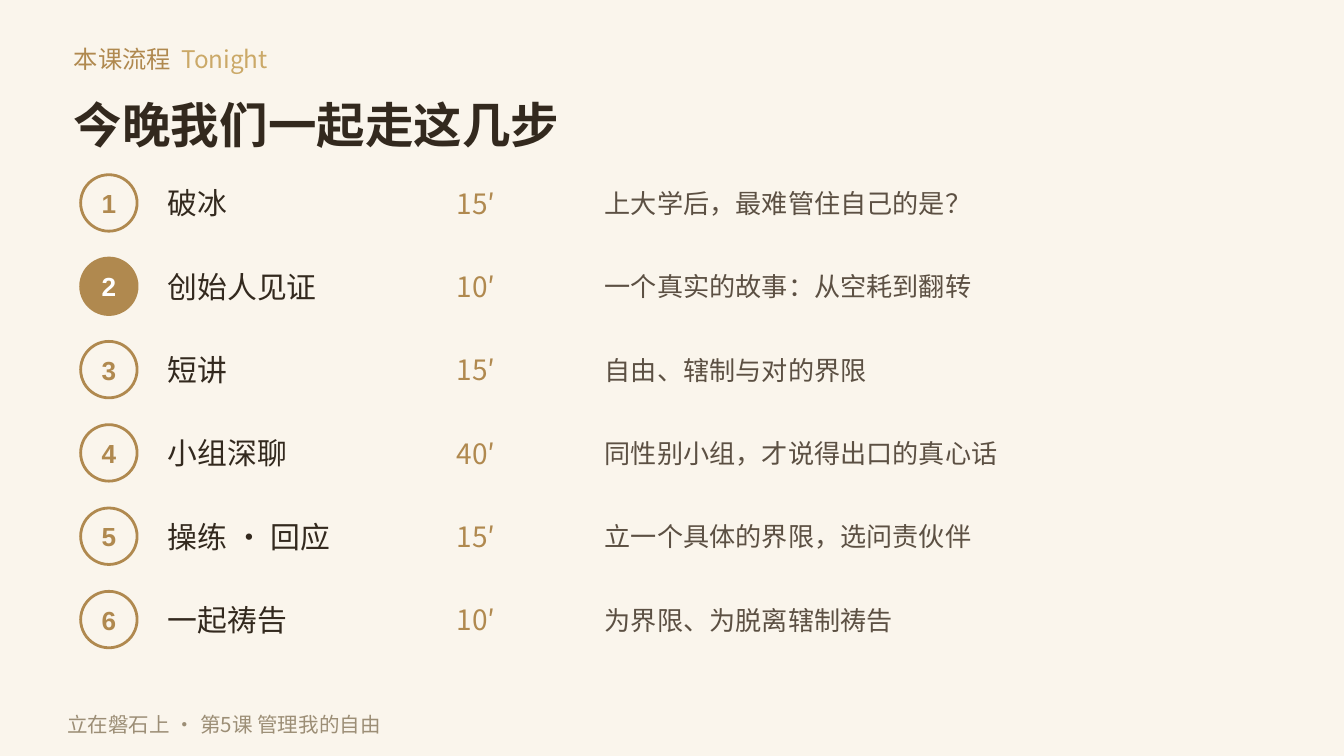
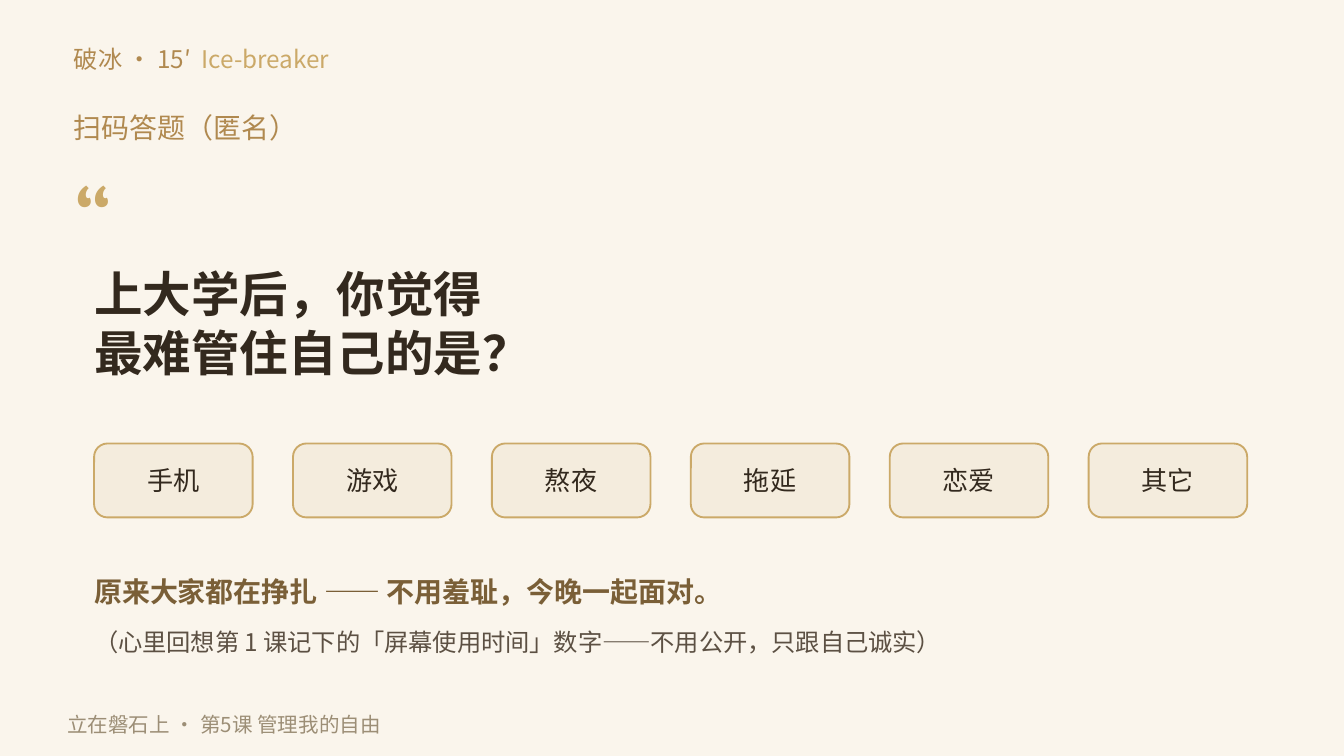
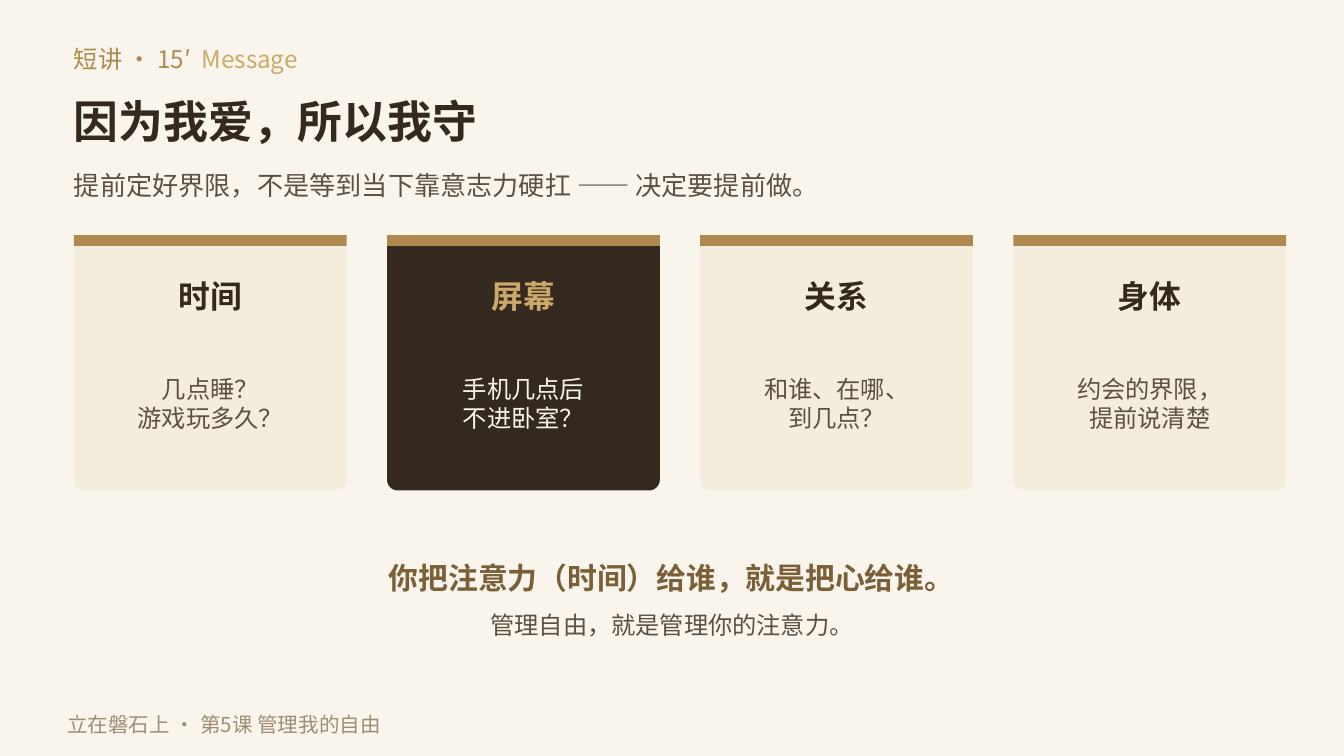
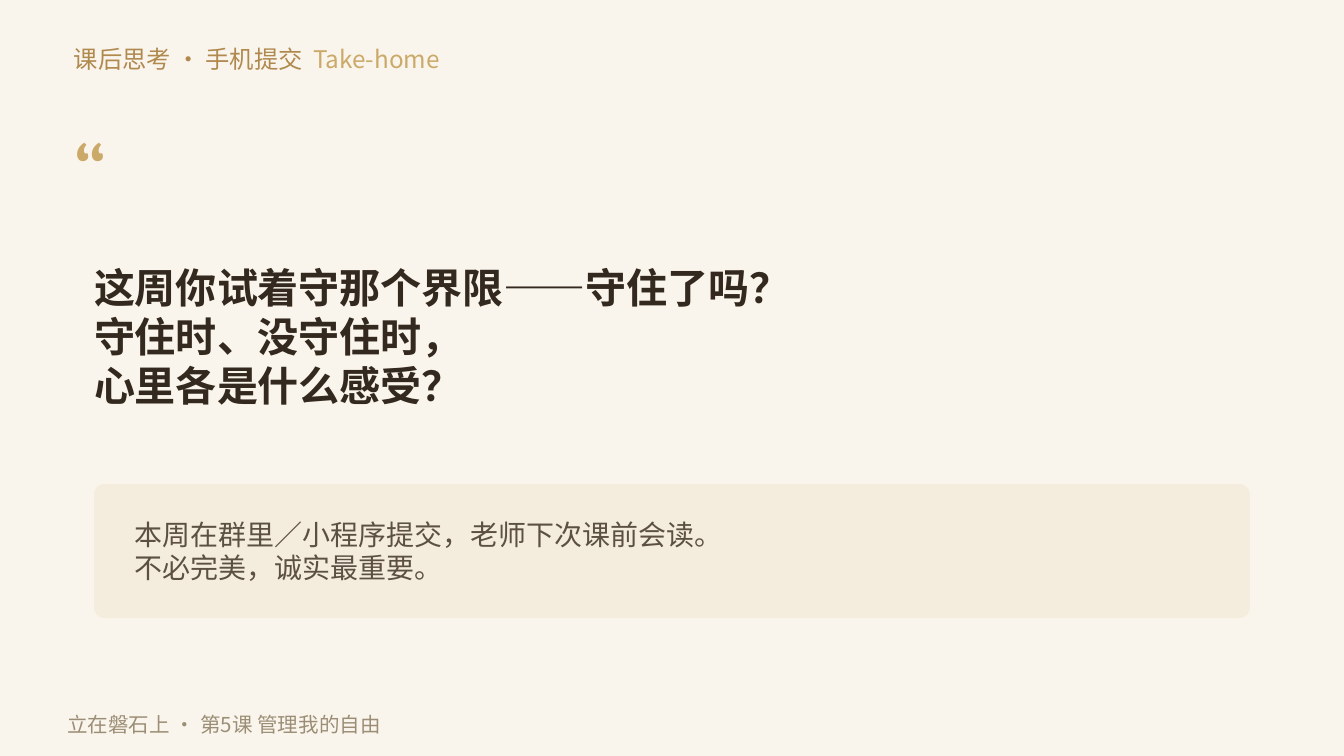
from dataclasses import dataclass
from typing import NamedTuple, Optional

from lxml import etree
from pptx import Presentation
from pptx.dml.color import RGBColor
from pptx.enum.shapes import MSO_SHAPE
from pptx.enum.text import MSO_ANCHOR, PP_ALIGN
from pptx.oxml.ns import qn
from pptx.util import Inches, Pt

RECTANGLE, ROUNDED, OVAL = MSO_SHAPE.RECTANGLE, MSO_SHAPE.ROUNDED_RECTANGLE, MSO_SHAPE.OVAL
LEFT, CENTER = PP_ALIGN.LEFT, PP_ALIGN.CENTER
MIDDLE = MSO_ANCHOR.MIDDLE
BLANK_LAYOUT = 6


@dataclass(frozen=True)
class Theme:
    cream: str = "FAF5EC"
    sand: str = "F4ECDD"
    bronze: str = "B0894F"
    gold: str = "CBA968"
    brown: str = "7A5F37"
    ink: str = "33291E"
    body: str = "5C5043"
    muted: str = "9C8E76"
    white: str = "FFFFFF"

    font: str = "Noto Sans CJK SC"
    number_font: str = "Arial"
    quote_font: str = "Cambria"

    footer_size: float = 11
    small_size: float = 13
    text_size: float = 14
    lead_size: float = 15
    item_size: float = 16
    card_size: float = 17
    question_size: float = 22
    heading_size: float = 24
    title_size: float = 26
    small_quote_size: float = 48
    large_quote_size: float = 56


THEME = Theme()


class Area(NamedTuple):
    """Left, top, width and height in inches."""
    left: float
    top: float
    width: float
    height: float

    def lengths(self) -> list:
        return [Inches(value) for value in self]


class Style(NamedTuple):
    size: float
    color: str
    bold: bool = False
    font: str = THEME.font


class Step(NamedTuple):
    name: str
    minutes: int
    detail: str
    filled: bool = False


class Card(NamedTuple):
    name: str
    lines: list
    dark: bool = False


SLIDE = Area(0, 0, 10, 10 * 9 / 16)
FOOTER = "立在磐石上 · 第5课 管理我的自由"
KICKER = Style(THEME.small_size, THEME.bronze)
KICKER_ENGLISH = Style(THEME.small_size, THEME.gold)
TITLE = Style(THEME.title_size, THEME.ink, True)
HEADING = Style(THEME.heading_size, THEME.ink, True)
QUESTION = Style(THEME.question_size, THEME.ink, True)
LEAD = Style(THEME.lead_size, THEME.bronze)
ITEM = Style(THEME.item_size, THEME.ink)
CHIP = Style(THEME.text_size, THEME.ink)
DETAIL = Style(THEME.text_size, THEME.body)
NOTE = Style(THEME.small_size, THEME.body)

STEPS = [
    Step("破冰", 15, "上大学后，最难管住自己的是？"),
    Step("创始人见证", 10, "一个真实的故事：从空耗到翻转", True),
    Step("短讲", 15, "自由、辖制与对的界限"),
    Step("小组深聊", 40, "同性别小组，才说得出口的真心话"),
    Step("操练 · 回应", 15, "立一个具体的界限，选问责伙伴"),
    Step("一起祷告", 10, "为界限、为脱离辖制祷告"),
]
STRUGGLES = ["手机", "游戏", "熬夜", "拖延", "恋爱", "其它"]
CARDS = [
    Card("时间", ["几点睡？", "游戏玩多久？"]),
    Card("屏幕", ["手机几点后", "不进卧室？"], True),
    Card("关系", ["和谁、在哪、", "到几点？"]),
    Card("身体", ["约会的界限，", "提前说清楚"]),
]


def add_span(para, text: str, style: Style, spacing: Optional[int] = None) -> None:
    """Add a run; spacing is extra letter spacing in hundredths of a point."""
    span = para.add_run()
    span.text = text
    formats = {"size": Pt(style.size), "bold": style.bold, "name": style.font}
    for name, value in formats.items():
        setattr(span.font, name, value)
    span.font.color.rgb = RGBColor.from_string(style.color)
    properties = span.font._element
    for tag in ("a:ea", "a:cs"):
        etree.SubElement(properties, qn(tag)).set("typeface", style.font)
    if spacing is not None:
        properties.set("spc", str(spacing))


def add_text(page, area: Area, lines: list, style: Style, align=LEFT):
    """Add a text box without insets, one paragraph a line."""
    frame = page.shapes.add_textbox(*area.lengths()).text_frame
    formats = {"word_wrap": True, "vertical_anchor": MIDDLE, "margin_left": 0,
               "margin_top": 0, "margin_right": 0, "margin_bottom": 0}
    for name, value in formats.items():
        setattr(frame, name, value)
    for index, line in enumerate(lines):
        para = frame.add_paragraph() if index else frame.paragraphs[0]
        para.alignment = align
        add_span(para, line, style)
    return frame


def add_box(page, kind, area: Area, fill: str, line: Optional[str] = None,
            line_width: float = 1, radius: float = 0) -> None:
    """Add a filled shape; radius is the corner radius in inches."""
    box = page.shapes.add_shape(kind, *area.lengths())
    box.shadow.inherit = False
    box.fill.solid()
    box.fill.fore_color.rgb = RGBColor.from_string(fill)
    if line:
        box.line.color.rgb = RGBColor.from_string(line)
        box.line.width = Pt(line_width)
    else:
        box.line.fill.background()
    if radius:
        box.adjustments[0] = radius / min(area.width, area.height)


def add_page(deck, kicker: str, english: str):
    """Add a slide with the shared ground, kicker and footer."""
    page = deck.slides.add_slide(deck.slide_layouts[BLANK_LAYOUT])
    add_box(page, RECTANGLE, SLIDE, THEME.cream)
    frame = add_text(page, Area(0.55, 0.28, 8.5, 0.32), [kicker], KICKER)
    add_span(frame.paragraphs[0], " ", KICKER, 290)
    add_span(frame.paragraphs[0], english, KICKER_ENGLISH)
    add_text(page, Area(0.5, 5.25, 7.5, 0.28), [FOOTER],
             Style(THEME.footer_size, THEME.muted))
    return page


def add_quote_mark(page, area: Area, size: float) -> None:
    add_text(page, area, ["“"], Style(size, THEME.gold, font=THEME.quote_font))


def add_step(page, number: int, step: Step) -> None:
    top, height = 1.3 + (number - 1) * 0.62, 0.42
    circle = Area(0.6, top, height, height)
    fill, color = (THEME.bronze, THEME.white) if step.filled else (THEME.cream, THEME.bronze)
    add_box(page, OVAL, circle, fill, THEME.bronze, 1.5)
    add_text(page, circle, [str(number)],
             Style(THEME.text_size, color, True, THEME.number_font), CENTER)
    columns = [(1.25, 2, step.name, ITEM), (3.4, 0.9, f"{step.minutes}′", LEAD),
               (4.5, 4.8, step.detail, DETAIL)]
    for left, width, text, style in columns:
        add_text(page, Area(left, top, width, height), [text], style)


def add_card(page, index: int, card: Card) -> None:
    width, gap, inset = 2.03, 0.3, 0.15
    left = 0.55 + index * (width + gap)
    fill, name_color, text_color = (
        (THEME.ink, THEME.gold, THEME.cream) if card.dark
        else (THEME.sand, THEME.ink, THEME.body))
    add_box(page, ROUNDED, Area(left, 1.75, width, 1.9), fill, radius=0.08)
    add_box(page, RECTANGLE, Area(left, 1.75, width, 0.08), THEME.bronze)
    inner_left, inner_width = left + inset, width - 2 * inset
    add_text(page, Area(inner_left, 2, inner_width, 0.4), [card.name],
             Style(THEME.card_size, name_color, True), CENTER)
    add_text(page, Area(inner_left, 2.55, inner_width, 0.9), card.lines,
             Style(THEME.small_size, text_color), CENTER)


def build_agenda(deck) -> None:
    page = add_page(deck, "本课流程", "Tonight")
    add_text(page, Area(0.55, 0.7, 9, 0.45), ["今晚我们一起走这几步"], TITLE)
    for number, step in enumerate(STEPS, 1):
        add_step(page, number, step)


def build_ice_breaker(deck) -> None:
    page = add_page(deck, "破冰 · 15′", "Ice-breaker")
    add_text(page, Area(0.55, 0.75, 9, 0.4), ["扫码答题（匿名）"], LEAD)
    add_quote_mark(page, Area(0.55, 1.25, 1, 0.7), THEME.large_quote_size)
    add_text(page, Area(0.7, 1.85, 8.5, 1.1), ["上大学后，你觉得", "最难管住自己的是？"], TITLE)
    width, gap = 1.18, 0.3
    for index, struggle in enumerate(STRUGGLES):
        chip = Area(0.7 + index * (width + gap), 3.3, width, 0.55)
        add_box(page, ROUNDED, chip, THEME.sand, THEME.gold, radius=0.1)
        add_text(page, chip, [struggle], CHIP, CENTER)
    add_text(page, Area(0.7, 4.2, 8.5, 0.4), ["原来大家都在挣扎 —— 不用羞耻，今晚一起面对。"],
             Style(THEME.lead_size, THEME.brown, True))
    add_text(page, Area(0.7, 4.6, 8.5, 0.35),
             ["（心里回想第 1 课记下的「屏幕使用时间」数字——不用公开，只跟自己诚实）"], NOTE)


def build_message(deck) -> None:
    page = add_page(deck, "短讲 · 15′", "Message")
    add_text(page, Area(0.55, 0.7, 9, 0.4), ["因为我爱，所以我守"], HEADING)
    add_text(page, Area(0.55, 1.2, 9, 0.35),
             ["提前定好界限，不是等到当下靠意志力硬扛 —— 决定要提前做。"], DETAIL)
    for index, card in enumerate(CARDS):
        add_card(page, index, card)
    add_text(page, Area(0.55, 4.1, 8.9, 0.4), ["你把注意力（时间）给谁，就是把心给谁。"],
             Style(THEME.item_size, THEME.brown, True), CENTER)
    add_text(page, Area(0.55, 4.5, 8.9, 0.3), ["管理自由，就是管理你的注意力。"], NOTE, CENTER)


def build_take_home(deck) -> None:
    page = add_page(deck, "课后思考 · 手机提交", "Take-home")
    add_quote_mark(page, Area(0.55, 0.95, 1, 0.6), THEME.small_quote_size)
    add_text(page, Area(0.7, 1.7, 8.5, 1.6),
             ["这周你试着守那个界限——守住了吗？", "守住时、没守住时，", "心里各是什么感受？"], QUESTION)
    add_box(page, ROUNDED, Area(0.7, 3.6, 8.6, 1), THEME.sand, radius=0.08)
    add_text(page, Area(1, 3.75, 8, 0.7),
             ["本周在群里／小程序提交，老师下次课前会读。", "不必完美，诚实最重要。"],
             Style(THEME.lead_size, THEME.body))


def main() -> None:
    deck = Presentation()
    deck.slide_width, deck.slide_height = Inches(SLIDE.width), Inches(SLIDE.height)
    for build in (build_agenda, build_ice_breaker, build_message, build_take_home):
        build(deck)
    deck.save("out.pptx")


if __name__ == "__main__":
    main()
